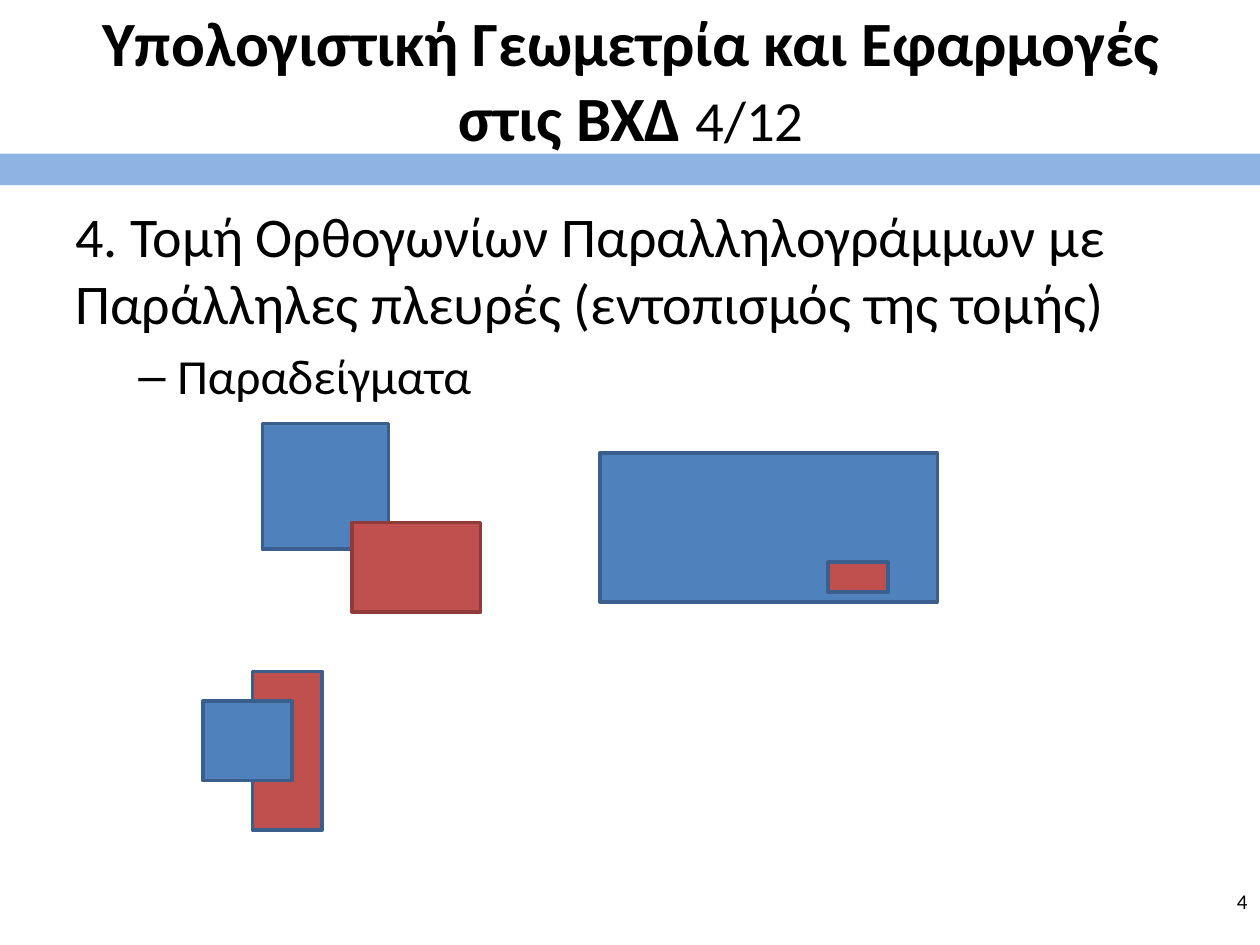
from lxml import etree
from pptx import Presentation
from pptx.dml.color import RGBColor
from pptx.enum.shapes import MSO_SHAPE
from pptx.enum.text import MSO_ANCHOR, PP_ALIGN
from pptx.oxml.ns import qn
from pptx.util import Inches, Pt

RECTANGLE = MSO_SHAPE.RECTANGLE
TOP, MIDDLE = MSO_ANCHOR.TOP, MSO_ANCHOR.MIDDLE
LEFT, CENTER, RIGHT = PP_ALIGN.LEFT, PP_ALIGN.CENTER, PP_ALIGN.RIGHT

WIDTH, HEIGHT = Inches(10), Inches(7.5)
FONT = "Calibri"
COLORS = {
    "text": "000000",
    "band": "8EB4E3",
    "blue": "4F81BD",
    "blue_edge": "3A5F8C",
    "red": "C0504D",
    "red_edge": "8E3B39",
}
GRID_COLUMNS, GRID_ROWS = 74, 41
EXAMPLES = [
    (6, 0, 12.7, 12.7, "blue", "blue_edge"),
    (40, 3, 34, 15, "blue", "blue_edge"),
    (15, 10, 13, 9, "red", "red_edge"),
    (63, 14, 6, 3, "red", "blue_edge"),
    (5, 25, 7, 16, "red", "blue_edge"),
    (0, 28, 9, 8, "blue", "blue_edge"),
]


def share_box(left, top, width, height):
    """Turn percentages of the slide's size into a box of lengths."""
    return tuple(
        round(share * side / 100)
        for share, side in zip((left, top, width, height), (WIDTH, HEIGHT) * 2)
    )


def add_rectangle(slide, box, fill, edge=None):
    """Draw a flat rectangle, outlined when an edge colour is given."""
    rectangle = slide.shapes.add_shape(RECTANGLE, *box)
    rectangle.shadow.inherit = False
    rectangle.fill.solid()
    rectangle.fill.fore_color.rgb = RGBColor.from_string(COLORS[fill])
    if edge:
        rectangle.line.color.rgb = RGBColor.from_string(COLORS[edge])
        rectangle.line.width = Pt(2)
    else:
        rectangle.line.fill.background()


def add_frame(slide, box, anchor):
    """Add a wrapping text box and return its text frame."""
    frame = slide.shapes.add_textbox(*box).text_frame
    frame.word_wrap = True
    frame.vertical_anchor = anchor
    return frame


def write(paragraph, runs, align):
    """Fill a paragraph with runs of (text, size, bold)."""
    paragraph.alignment = align
    for text, size, bold in runs:
        run = paragraph.add_run()
        run.text = text
        run.font.name = FONT
        run.font.size = Pt(size)
        run.font.bold = bold
        run.font.color.rgb = RGBColor.from_string(COLORS["text"])


def add_dash(paragraph, margin, hang):
    """Give a paragraph a dash bullet with a hanging indent."""
    properties = paragraph._p.get_or_add_pPr()
    properties.set("marL", str(Inches(margin)))
    properties.set("indent", str(-Inches(hang)))
    etree.SubElement(properties, qn("a:buFont")).set("typeface", "Arial")
    etree.SubElement(properties, qn("a:buChar")).set("char", "–")


def add_title(slide, box):
    """Write the centred title with its part number."""
    title = add_frame(slide, box, MIDDLE).paragraphs[0]
    write(title, [
        ("Υπολογιστική Γεωμετρία και Εφαρμογές στις ΒΧΔ ", 36, True),
        ("4/12", 32.4, False),
    ], CENTER)


def add_body(slide, box):
    """Write the problem statement and the examples heading."""
    frame = add_frame(slide, box, TOP)
    statement = "4. Τομή Ορθογωνίων Παραλληλογράμμων με Παράλληλες πλευρές (εντοπισμός της τομής)"
    write(frame.paragraphs[0], [(statement, 32, False)], LEFT)
    heading = frame.add_paragraph()
    heading.level = 1
    heading.space_before = Pt(5.6)
    add_dash(heading, 0.81, 0.31)
    write(heading, [("Παραδείγματα", 28, False)], LEFT)


def add_examples(slide, box):
    """Place the intersecting rectangles on the grid of the box."""
    left, top, width, height = box
    column_width, row_height = width / GRID_COLUMNS, height / GRID_ROWS
    for column, row, columns, rows, fill, edge in EXAMPLES:
        place = (
            round(left + column * column_width),
            round(top + row * row_height),
            round(columns * column_width),
            round(rows * row_height),
        )
        add_rectangle(slide, place, fill, edge)


def add_page_number(slide, box):
    """Write the page number at the right of the box."""
    number = add_frame(slide, box, MIDDLE).paragraphs[0]
    write(number, [("4", 12, False)], RIGHT)


def main():
    """Build and save the slide."""
    presentation = Presentation()
    presentation.slide_width, presentation.slide_height = WIDTH, HEIGHT
    slide = presentation.slides.add_slide(presentation.slide_layouts[6])
    add_rectangle(slide, share_box(0, 16.27, 100, 3.33), "band")
    add_title(slide, share_box(5.1, 1.73, 90, 13.2))
    add_body(slide, share_box(5, 20.67, 90, 22))
    add_page_number(slide, share_box(87.3, 92.67, 12.7, 5.33))
    add_examples(slide, share_box(16.1, 44.8, 58.3, 43.04))
    presentation.save("out.pptx")


if __name__ == "__main__":
    main()
